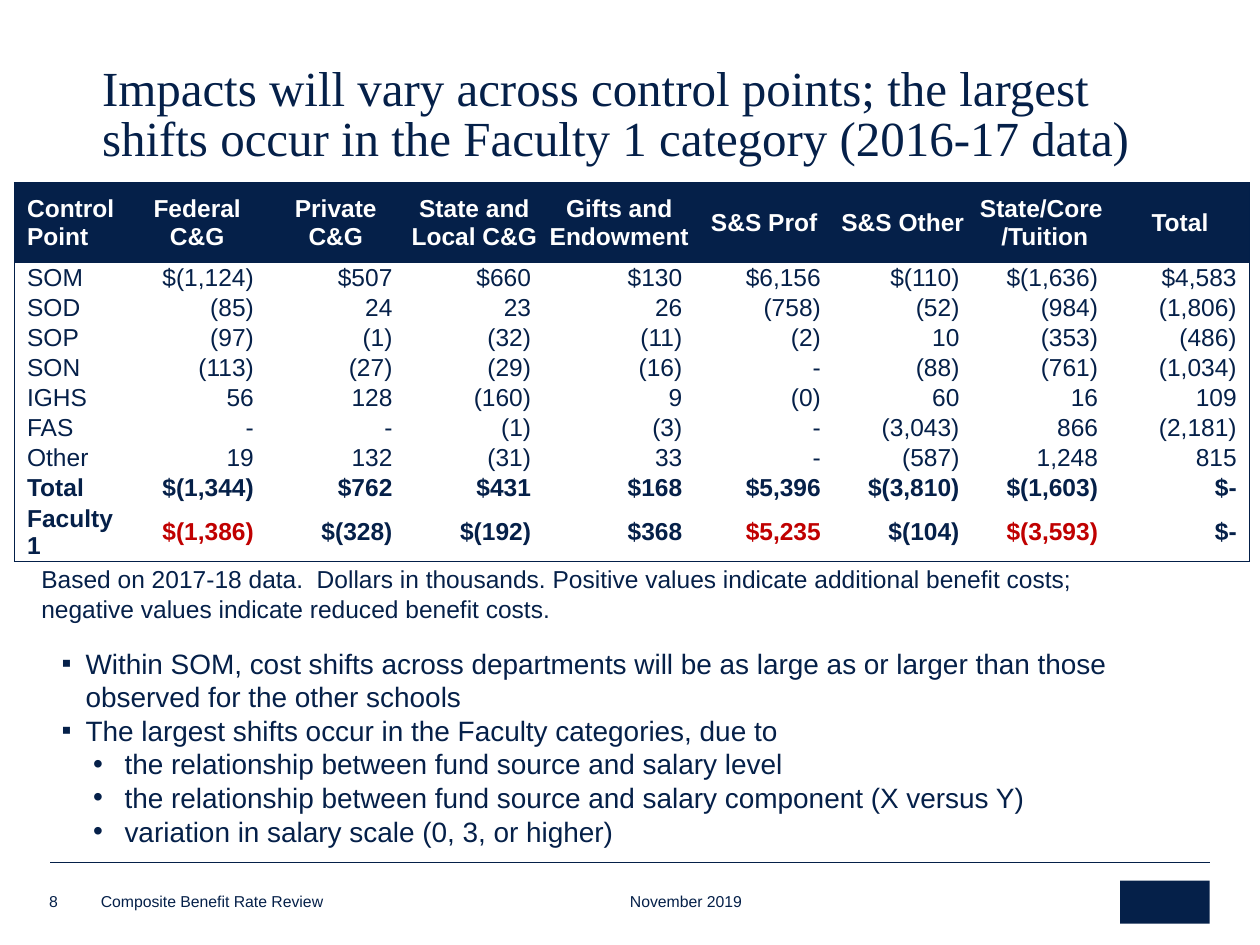
from lxml import etree
from pptx import Presentation
from pptx import util as u
from pptx.dml.color import RGBColor
from pptx.enum import shapes, text
from pptx.oxml.ns import qn

NAVY = RGBColor(0x05, 0x20, 0x49)
BORDER = RGBColor(0x03, 0x1F, 0x49)
RED = RGBColor(0xC0, 0x00, 0x00)
WHITE = RGBColor(0xFF, 0xFF, 0xFF)
COLUMNS, ROWS = 100, 75
NO_TABLE_STYLE = "{2D5ABB26-0587-4C30-8999-92F81FD0307C}"

TITLE = ("Impacts will vary across control points; the largest shifts occur "
         "in the Faculty 1 category (2016-17 data)")
HEADERS = ["Control Point", "Federal C&G", "Private C&G", "State and\nLocal C&G",
           "Gifts and Endowment", "S&S Prof", "S&S Other",
           "State/Core\n /Tuition", "Total"]
COSTS = [
    ["SOM", "$(1,124)", "$507", "$660", "$130", "$6,156", "$(110)", "$(1,636)", "$4,583"],
    ["SOD", "(85)", "24", "23", "26", "(758)", "(52)", "(984)", "(1,806)"],
    ["SOP", "(97)", "(1)", "(32)", "(11)", "(2)", "10", "(353)", "(486)"],
    ["SON", "(113)", "(27)", "(29)", "(16)", "-", "(88)", "(761)", "(1,034)"],
    ["IGHS", "56", "128", "(160)", "9", "(0)", "60", "16", "109"],
    ["FAS", "-", "-", "(1)", "(3)", "-", "(3,043)", "866", "(2,181)"],
    ["Other", "19", "132", "(31)", "33", "-", "(587)", "1,248", "815"],
    ["Total", "$(1,344)", "$762", "$431", "$168", "$5,396", "$(3,810)", "$(1,603)", "$-"],
    ["Faculty 1", "$(1,386)", "$(328)", "$(192)", "$368", "$5,235", "$(104)", "$(3,593)", "$-"],
]
BOLD_LABELS = {"Total", "Faculty 1"}
LARGEST_SHIFTS = {"$(1,386)", "$5,235", "$(3,593)"}
TABLE_COLUMNS = [9, 11, 11, 11, 12, 11, 11, 11, 11]
TABLE_ROWS = [6.4] + [2.38] * 8 + [4.5]
NOTE = ("Based on 2017-18 data.  Dollars in thousands. Positive values indicate "
        "additional benefit costs; negative values indicate reduced benefit costs.")
FINDINGS = [
    (0, "Within SOM, cost shifts across departments will be as large as or larger "
        "than those observed for the other schools"),
    (0, "The largest shifts occur in the Faculty categories, due to"),
    (1, "the relationship between fund source and salary level"),
    (1, "the relationship between fund source and salary component (X versus Y)"),
    (1, "variation in salary scale (0, 3, or higher)"),
]
# Bullet sign, text indent and hanging indent in inches, by level
BULLETS = [("▪", 0.19, -0.19), ("•", 0.5, -0.25)]


class SlideBuilder:
    """Places styled elements on a grid of COLUMNS by ROWS."""

    def __init__(self, presentation):
        self.column = presentation.slide_width / COLUMNS
        self.row = presentation.slide_height / ROWS
        self.slide = presentation.slides.add_slide(presentation.slide_layouts[5])

    def place(self, left, top, width, height):
        return (int(left * self.column), int(top * self.row),
                int(width * self.column), int(height * self.row))

    def add_run(self, paragraph, words, size, color=NAVY, bold=False, font="Arial"):
        run = paragraph.add_run()
        run.text = words
        run.font.name, run.font.size, run.font.bold = font, u.Pt(size), bold
        run.font.color.rgb = color

    def set_title(self, words, *box):
        title = self.slide.shapes.title
        title.left, title.top, title.width, title.height = self.place(*box)
        frame = title.text_frame
        frame.auto_size = text.MSO_AUTO_SIZE.NONE
        frame.vertical_anchor = text.MSO_ANCHOR.TOP
        paragraph = frame.paragraphs[0]
        paragraph.alignment = text.PP_ALIGN.LEFT
        paragraph.line_spacing = 0.85
        self.add_run(paragraph, words, 28, font="Times New Roman")

    def add_text_box(self, *box):
        frame = self.slide.shapes.add_textbox(*self.place(*box)).text_frame
        frame.word_wrap = True
        return frame

    def add_note(self, words, *box):
        self.add_run(self.add_text_box(*box).paragraphs[0], words, 14)

    def add_footer(self, words, *box, tab=None):
        """One bottom-aligned line; tab is the stop for its second part, in columns."""
        frame = self.add_text_box(*box)
        frame.margin_left = frame.margin_right = frame.margin_top = frame.margin_bottom = 0
        frame.vertical_anchor = text.MSO_ANCHOR.BOTTOM
        paragraph = frame.paragraphs[0]
        self.add_run(paragraph, words, 9)
        if tab:
            stops = etree.SubElement(paragraph._p.get_or_add_pPr(), qn("a:tabLst"))
            etree.SubElement(stops, qn("a:tab"), pos=str(int(tab * self.column)), algn="l")

    def add_bullets(self, items, *box):
        frame = self.add_text_box(*box)
        for index, (level, words) in enumerate(items):
            paragraph = frame.add_paragraph() if index else frame.paragraphs[0]
            paragraph.level = level
            sign, indent, hanging = BULLETS[level]
            properties = paragraph._p.get_or_add_pPr()
            properties.set("marL", str(u.Inches(indent)))
            properties.set("indent", str(u.Inches(hanging)))
            etree.SubElement(properties, qn("a:buFont"), typeface="Arial")
            etree.SubElement(properties, qn("a:buChar"), char=sign)
            self.add_run(paragraph, words, 16)

    def add_rule(self, left, right, top):
        start_x, y, length, _ = self.place(left, top, right - left, 0)
        rule = self.slide.shapes.add_connector(
            shapes.MSO_CONNECTOR.STRAIGHT, start_x, y, start_x + length, y)
        rule.line.color.rgb, rule.line.width = NAVY, u.Pt(0.25)
        etree.SubElement(rule._element.spPr, qn("a:effectLst"))

    def add_block(self, *box):
        block = self.slide.shapes.add_shape(shapes.MSO_SHAPE.RECTANGLE, *self.place(*box))
        block.shadow.inherit = False
        block.fill.solid()
        block.fill.fore_color.rgb = NAVY
        block.line.fill.background()

    def add_cost_table(self, left, top):
        data = [HEADERS] + COSTS
        last_row, last_column = len(data) - 1, len(HEADERS) - 1
        table = self.slide.shapes.add_table(
            len(data), len(HEADERS),
            *self.place(left, top, sum(TABLE_COLUMNS), sum(TABLE_ROWS))).table
        table.horz_banding = False
        table._tbl.tblPr.find(qn("a:tableStyleId")).text = NO_TABLE_STYLE
        for column, width in zip(table.columns, TABLE_COLUMNS):
            column.width = int(width * self.column)
        for row, height in zip(table.rows, TABLE_ROWS):
            row.height = int(height * self.row)
        for r, values in enumerate(data):
            for c, words in enumerate(values):
                cell = table.cell(r, c)
                self.fill_cell(cell, words, r == 0, c == 0, values[0] in BOLD_LABELS)
                self.set_borders(cell, {"lnL": c == 0, "lnR": c == last_column,
                                        "lnT": r == 0, "lnB": r == last_row})

    def fill_cell(self, cell, words, header, label, bold):
        cell.vertical_anchor = text.MSO_ANCHOR.MIDDLE
        cell.margin_top = cell.margin_bottom = 0
        cell.margin_left = u.Inches(0.1 if label or not header else 0.01)
        cell.margin_right = u.Inches(0.01 if header else 0.05 if label else 0.1)
        if header:
            cell.fill.solid()
            cell.fill.fore_color.rgb = NAVY
        else:
            cell.fill.background()
        color = WHITE if header else RED if words in LARGEST_SHIFTS else NAVY
        for index, line in enumerate(words.split("\n")):
            frame = cell.text_frame
            paragraph = frame.add_paragraph() if index else frame.paragraphs[0]
            if label:
                paragraph.alignment = text.PP_ALIGN.LEFT
            elif header:
                paragraph.alignment = text.PP_ALIGN.CENTER
            else:
                paragraph.alignment = text.PP_ALIGN.RIGHT
            self.add_run(paragraph, line, 14, color, header or bold)

    def set_borders(self, cell, sides):
        drawn = [side for side, shown in sides.items() if shown]
        properties = cell._tc.get_or_add_tcPr()
        for index, side in enumerate(drawn):
            line = etree.Element(qn(f"a:{side}"), w=str(u.Pt(0.75)))
            fill = etree.SubElement(line, qn("a:solidFill"))
            etree.SubElement(fill, qn("a:srgbClr"), val=str(BORDER))
            properties.insert(index, line)


def main():
    presentation = Presentation()
    presentation.slide_width, presentation.slide_height = u.Inches(10), u.Inches(7.5)
    builder = SlideBuilder(presentation)
    builder.add_rule(4, 96, 68.4)
    builder.add_block(88.9, 69.9, 7.1, 3.4)
    builder.set_title(TITLE, 7.1, 4.8, 88.5, 9.1)
    builder.add_footer("8", 3.9, 70.6, 2.7, 1.7)
    builder.add_cost_table(1.15, 14.5)
    builder.add_bullets(FINDINGS, 3.9, 50.8, 86.8, 19.9)
    builder.add_note(NOTE, 2.3, 44.3, 90, 5.7)
    builder.add_footer("Composite Benefit Rate Review\tNovember 2019",
                       8, 70.8, 77.4, 1.5, tab=42)
    presentation.save("out.pptx")


if __name__ == "__main__":
    main()
